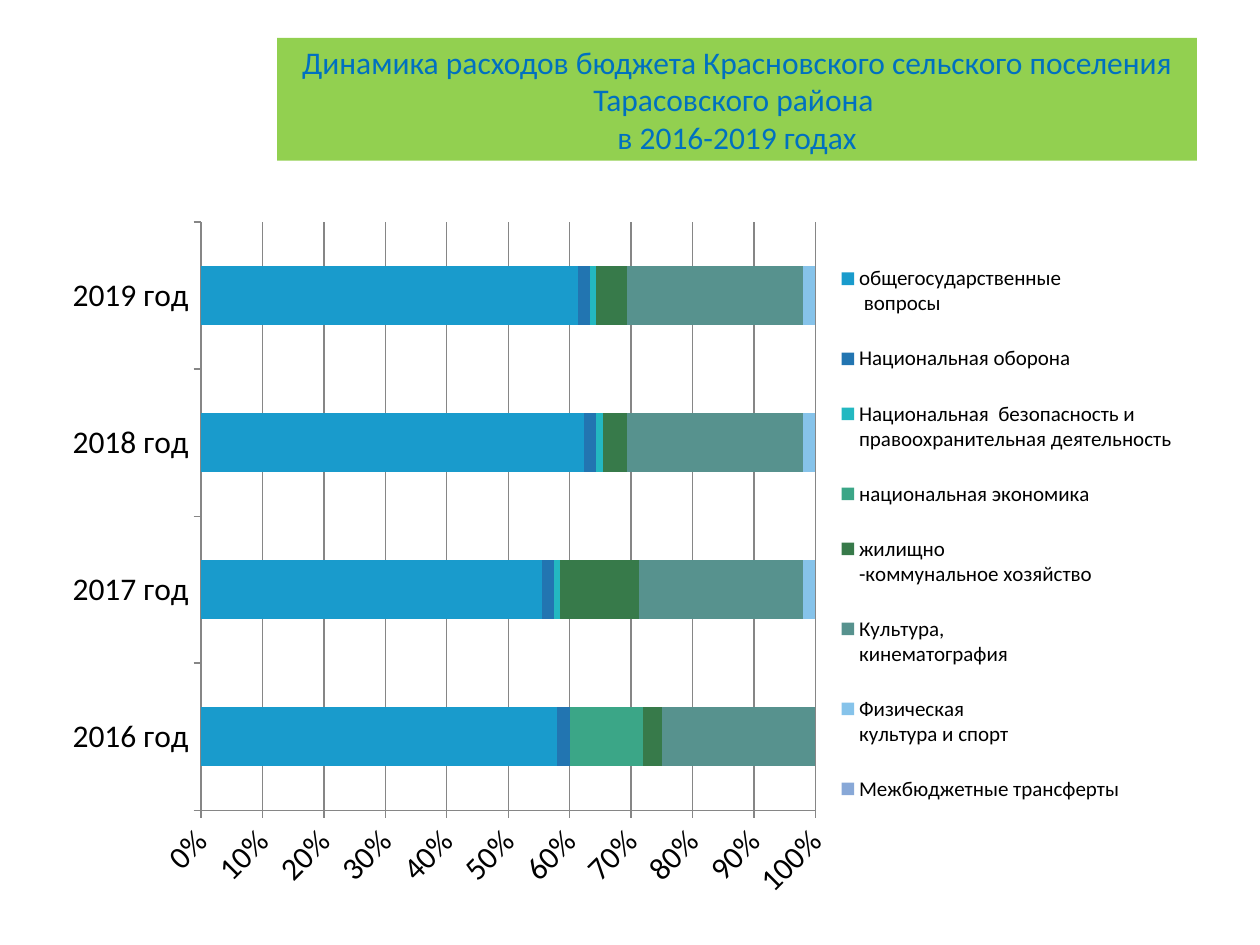
import pptx
import pptx.chart.data
import pptx.dml.color
import pptx.enum.chart
import pptx.enum.text
import pptx.oxml
import pptx.oxml.ns
import pptx.util

WIDTH, HEIGHT = 10, 7.5
COLORS = {"title_fill": "92D050", "title_text": "0070C0", "text": "000000", "axis": "868686"}
YEARS = ["2016 год", "2017 год", "2018 год", "2019 год"]
EXPENSES = [
    ("общегосударственные\n вопросы", (58, 56, 63, 62), "199BCC"),
    ("Национальная оборона", (2, 2, 2, 2), "2275B1"),
    ("Национальная  безопасность и правоохранительная деятельность", (0, 1, 1, 1), "23B8C1"),
    ("национальная экономика", (12, 0, 0, 0), "3BA687"),
    ("жилищно\n-коммунальное хозяйство", (3, 13, 4, 5), "377A4A"),
    ("Культура, \nкинематография", (25, 27, 29, 29), "57928E"),
    ("Физическая\nкультура и спорт", (0, 2, 2, 2), "86C3EA"),
    ("Межбюджетные трансферты", (0, 0, 0, 0), "88A8D7"),
]


def rgb(name):
    return pptx.dml.color.RGBColor.from_string(COLORS.get(name, name))


def style_font(font, size=18, color="text", name="Calibri", bold=False):
    font.size = pptx.util.Pt(size)
    font.name = name
    font.bold = bold
    font.color.rgb = rgb(color)


def write(tf, text, align=pptx.enum.text.PP_ALIGN.CENTER, **fmt):
    """Fill the first paragraph; a newline becomes a line break."""
    p = tf.paragraphs[0]
    p.alignment = align
    for i, line in enumerate(text.split("\n")):
        if i:
            p.add_line_break()
        r = p.add_run()
        r.text = line
        style_font(r.font, **fmt)


def place(element, x, y, w, h, inner=False):
    """Set a manual layout, in shares of the chart, on a plot area or legend."""
    for old in element.findall(pptx.oxml.ns.qn("c:layout")):
        element.remove(old)
    target = '<c:layoutTarget val="inner"/>' if inner else ""
    sizes = "".join(f'<c:{tag} val="{v}"/>' for tag, v in zip("xywh", (x, y, w, h)))
    layout = pptx.oxml.parse_xml(
        f'<c:layout {pptx.oxml.ns.nsdecls("c")}><c:manualLayout>{target}'
        f'<c:xMode val="edge"/><c:yMode val="edge"/>{sizes}</c:manualLayout></c:layout>')
    position = element.find(pptx.oxml.ns.qn("c:legendPos"))
    if position is None:
        element.insert(0, layout)
    else:
        position.addnext(layout)


class Deck:
    """Holds the presentation, its style and the current slide."""

    def __init__(self):
        self.prs = pptx.Presentation()
        self.prs.slide_width = pptx.util.Inches(WIDTH)
        self.prs.slide_height = pptx.util.Inches(HEIGHT)
        self.s = self.prs.slides.add_slide(self.prs.slide_layouts[5])

    def box(self, x, y, w, h):
        """Turn shares of the slide's size into lengths."""
        return [pptx.util.Inches(v * side)
                for v, side in zip((x, y, w, h), (WIDTH, HEIGHT) * 2)]

    def title(self, text, *shares):
        sp = self.s.shapes.title
        sp.left, sp.top, sp.width, sp.height = self.box(*shares)
        sp.fill.solid()
        sp.fill.fore_color.rgb = rgb("title_fill")
        tf = sp.text_frame
        tf.word_wrap = True
        tf.auto_size = pptx.enum.text.MSO_AUTO_SIZE.NONE
        tf.vertical_anchor = pptx.enum.text.MSO_ANCHOR.MIDDLE
        write(tf, text, color="title_text")

    def axis(self, axis):
        axis.major_tick_mark = pptx.enum.chart.XL_TICK_MARK.OUTSIDE
        axis.format.line.color.rgb = rgb("axis")
        style_font(axis.tick_labels.font)

    def stacked_bars(self, categories, series, *shares):
        data = pptx.chart.data.CategoryChartData(number_format="0")
        data.categories = categories
        for name, values, _ in series:
            data.add_series(name, values)
        kind = pptx.enum.chart.XL_CHART_TYPE.BAR_STACKED_100
        chart = self.s.shapes.add_chart(kind, *self.box(*shares), data).chart
        chart.has_title = False
        style_font(chart.font)
        plot = chart.plots[0]
        plot.vary_by_categories = False
        plot.gap_width, plot.overlap = 150, 100
        for ser, (_, _, color) in zip(plot.series, series):
            ser.format.fill.solid()
            ser.format.fill.fore_color.rgb = rgb(color)

        self.axis(chart.category_axis)
        value_axis = chart.value_axis
        self.axis(value_axis)
        value_axis.has_major_gridlines = True
        value_axis.major_gridlines.format.line.color.rgb = rgb("axis")
        value_axis.minimum_scale, value_axis.maximum_scale, value_axis.major_unit = 0, 1, 0.1
        value_axis.tick_labels.number_format = "0%"
        value_axis.tick_labels.number_format_is_linked = False
        labels = value_axis.tick_labels.font._element.getparent().getparent().getparent()
        labels.find(pptx.oxml.ns.qn("a:bodyPr")).set("rot", str(-45 * 60000))

        chart.has_legend = True
        legend = chart.legend
        legend.position = pptx.enum.chart.XL_LEGEND_POSITION.RIGHT
        legend.include_in_layout = False
        style_font(legend.font, size=12)
        place(legend._element, 0.67, 0.04, 0.31, 0.84)
        place(plot._element.getparent(), 0.13, 0.02, 0.53, 0.83, inner=True)


def main():
    deck = Deck()
    deck.stacked_bars(YEARS, EXPENSES, 0.04, 0.22, 0.92, 0.75)
    deck.title("Динамика расходов бюджета Красновского сельского поселения "
               "Тарасовского района \nв 2016-2019 годах", 0.22, 0.04, 0.73, 0.13)
    deck.prs.save("out.pptx")


if __name__ == "__main__":
    main()
